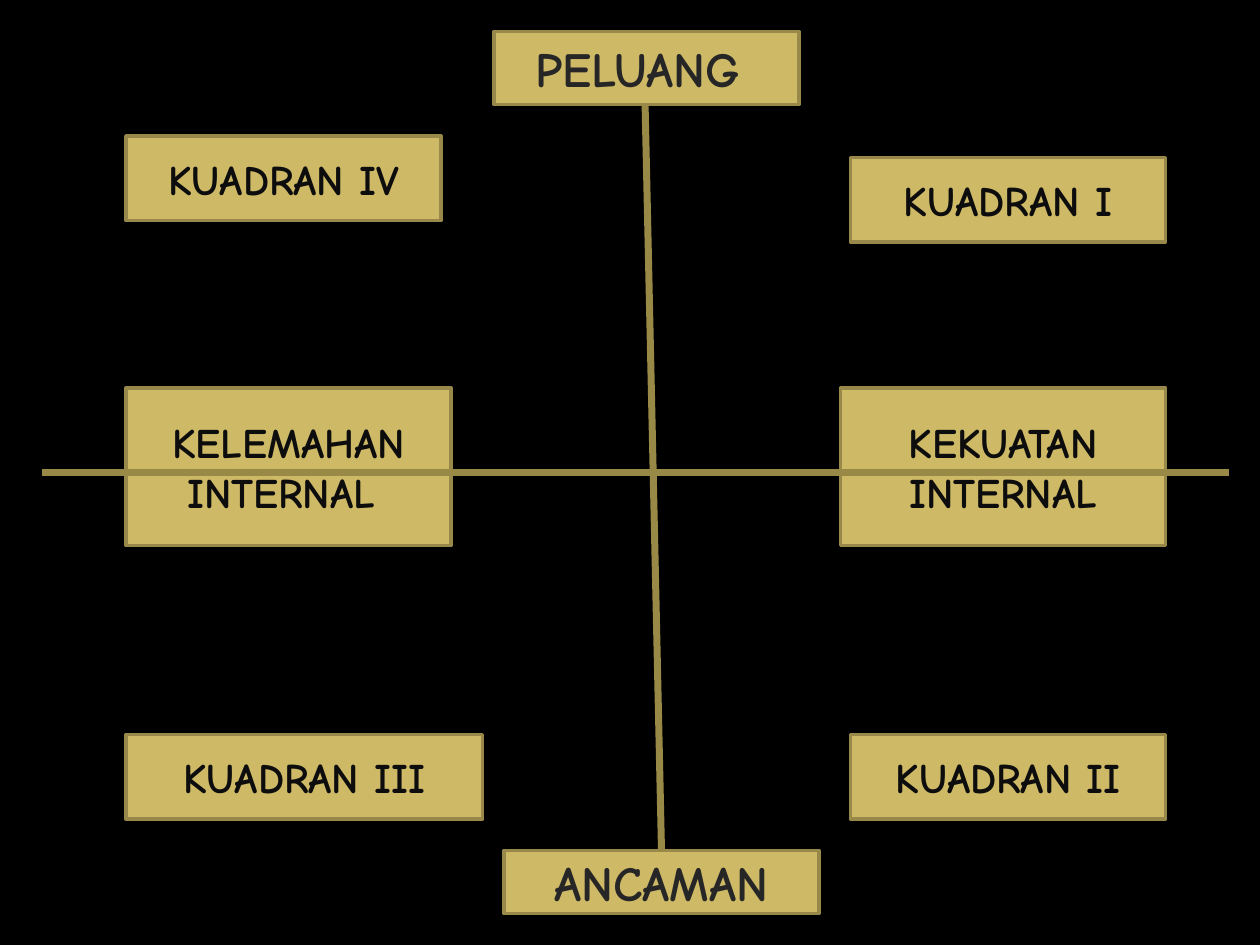
"""Build the SWOT quadrant diagram slide."""
import pptx
import pptx.dml.color
import pptx.enum.shapes
import pptx.enum.text
import pptx.oxml
import pptx.util

Inches, Pt = pptx.util.Inches, pptx.util.Pt

COLORS = {"background": "000000", "box": "CEB966", "border": "98894B",
          "axis": "998946", "factor": "262626", "label": "0D0D0D"}
FONT = "Comic Neue"

# text, left, top, width, height
EXTERNAL_FACTORS = [
    ("PELUANG ", 3.92, 0.25, 2.42, 0.58),
    ("ANCAMAN", 4, 6.75, 2.5, 0.5),
]
QUADRANTS_AND_INTERNAL_FACTORS = [
    ("KUADRAN IV", 1, 1.08, 2.5, 0.67),
    ("KELEMAHAN INTERNAL ", 1, 3.08, 2.58, 1.25),
    ("KUADRAN I", 6.75, 1.25, 2.5, 0.67),
    ("KUADRAN III", 1, 5.83, 2.83, 0.67),
    ("KUADRAN II", 6.75, 5.83, 2.5, 0.67),
    ("KEKUATAN INTERNAL", 6.67, 3.08, 2.58, 1.25),
]
AXES = [(5.12, 0.83, 5.25, 6.75), (0.33, 3.75, 9.75, 3.75)]


def rgb(name):
    """Return the named colour."""
    return pptx.dml.color.RGBColor.from_string(COLORS[name])


def add_box(slide, text, bounds, size, color):
    """Add a bordered box with centred bold text."""
    box = slide.shapes.add_shape(pptx.enum.shapes.MSO_SHAPE.RECTANGLE,
                                 *map(Inches, bounds))
    box.shadow.inherit = False
    box.fill.solid()
    box.fill.fore_color.rgb = rgb("box")
    box.line.color.rgb = rgb("border")
    box.line.width = Pt(2)
    frame = box.text_frame
    frame.word_wrap = True
    frame.vertical_anchor = pptx.enum.text.MSO_ANCHOR.MIDDLE
    frame.text = text
    paragraph = frame.paragraphs[0]
    paragraph.alignment = pptx.enum.text.PP_ALIGN.CENTER
    font = paragraph.runs[0].font
    font.name, font.size, font.bold = FONT, Pt(size), True
    font.color.rgb = rgb(color)


def add_axis(slide, ends):
    """Add a straight axis without a shadow."""
    axis = slide.shapes.add_connector(pptx.enum.shapes.MSO_CONNECTOR.STRAIGHT,
                                      *map(Inches, ends))
    axis.line.color.rgb = rgb("axis")
    axis.line.width = Pt(4)
    properties = axis._element.spPr
    properties.append(properties.makeelement(pptx.oxml.ns.qn("a:effectLst"), {}))


def main():
    """Assemble and save the slide."""
    deck = pptx.Presentation()
    deck.slide_width, deck.slide_height = Inches(10), Inches(7.5)
    slide = deck.slides.add_slide(deck.slide_layouts[6])
    slide.background.fill.solid()
    slide.background.fill.fore_color.rgb = rgb("background")
    for text, *bounds in EXTERNAL_FACTORS:
        add_box(slide, text, bounds, 28, "factor")
    for text, *bounds in QUADRANTS_AND_INTERNAL_FACTORS:
        add_box(slide, text, bounds, 24, "label")
    for ends in AXES:
        add_axis(slide, ends)
    deck.save("out.pptx")


if __name__ == "__main__":
    main()
